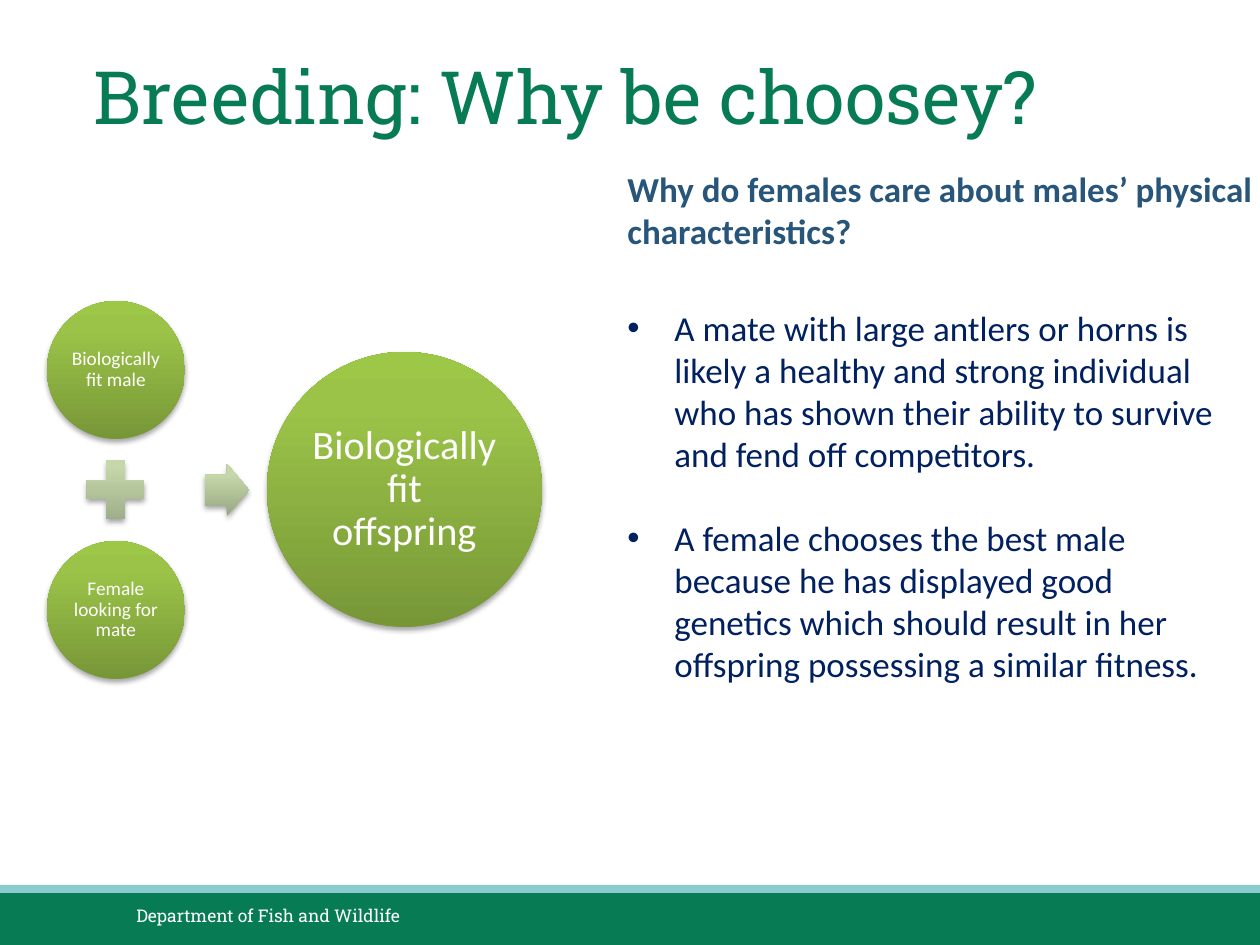
from dataclasses import dataclass

from lxml.etree import SubElement
from pptx import Presentation
from pptx.dml.color import RGBColor
from pptx.enum.shapes import MSO_SHAPE
from pptx.enum.text import MSO_ANCHOR, MSO_AUTO_SIZE, PP_ALIGN
from pptx.oxml import parse_xml
from pptx.oxml.ns import nsdecls, qn
from pptx.shapes.autoshape import Shape
from pptx.slide import Slide
from pptx.text.text import TextFrame, _Paragraph
from pptx.util import Pt

EMU_PER_PX = 914400 / 126


@dataclass(frozen=True)
class Theme:
    green: str = "067B54"
    teal: str = "8ACCCE"
    white: str = "FFFFFF"
    question: str = "28557A"
    navy: str = "002060"
    leaf: tuple[str, str, str] = ("779737", "9BC348", "9DC746")
    sage: tuple[str, str, str] = ("98A683", "C6D8AA", "C7DAAA")
    slab: str = "Roboto Slab"
    sans: str = "Calibri"
    title_size: int = 42
    body_size: int = 20
    result_size: int = 23
    parent_size: int = 11
    footer_size: int = 10


@dataclass(frozen=True)
class Box:
    left: int
    top: int
    width: int
    height: int

    def emu(self) -> tuple[int, int, int, int]:
        return px(self.left), px(self.top), px(self.width), px(self.height)


@dataclass(frozen=True)
class Circle:
    label: str
    left: int
    top: int
    diameter: int
    size: int
    inset: int


THEME = Theme()
CIRCLES = (
    Circle("Biologically fit male", 47, 301, 138, THEME.parent_size, 2),
    Circle("Female looking for mate", 47, 541, 138, THEME.parent_size, 2),
    Circle("Biologically fit offspring", 267, 352, 275, THEME.result_size, 3),
)
REASONS = (
    "A mate with large antlers or horns is likely a healthy and strong individual "
    "who has shown their ability to survive and fend off competitors.",
    "A female chooses the best male because he has displayed good genetics which "
    "should result in her offspring possessing a similar fitness.",
)


def px(length: int) -> int:
    return round(length * EMU_PER_PX)


def style(paragraph: _Paragraph, face: str, size: int, color: str, bold: bool = False) -> None:
    font = paragraph.font
    font.name, font.size, font.bold = face, Pt(size), bold
    font.color.rgb = RGBColor.from_string(color)


def add_text_frame(slide: Slide, box: Box) -> TextFrame:
    frame = slide.shapes.add_textbox(*box.emu()).text_frame
    frame.word_wrap = True
    return frame


def add_band(slide: Slide, box: Box, color: str) -> None:
    band = slide.shapes.add_shape(MSO_SHAPE.RECTANGLE, *box.emu())
    band.shadow.inherit = False
    band.fill.solid()
    band.fill.fore_color.rgb = RGBColor.from_string(color)
    band.line.fill.background()


def add_shaded(slide: Slide, kind: MSO_SHAPE, box: Box, shades: tuple[str, str, str]) -> Shape:
    """Add a borderless shape shaded from bottom to top, with a soft shadow below."""
    shape = slide.shapes.add_shape(kind, *box.emu())
    shape.line.fill.background()
    stops = "".join(
        f'<a:gs pos="{position}"><a:srgbClr val="{shade}"/></a:gs>'
        for position, shade in zip((0, 80000, 100000), shades)
    )
    properties = shape._element.spPr
    properties.find(qn("a:ln")).addprevious(parse_xml(
        f'<a:gradFill {nsdecls("a")} rotWithShape="1"><a:gsLst>{stops}</a:gsLst>'
        '<a:lin ang="16200000" scaled="0"/></a:gradFill>'
    ))
    properties.append(parse_xml(
        f'<a:effectLst {nsdecls("a")}><a:outerShdw blurRad="{Pt(3.1)}" dist="{Pt(1.8)}" '
        'dir="5400000" rotWithShape="0"><a:srgbClr val="000000"><a:alpha val="35000"/>'
        '</a:srgbClr></a:outerShdw></a:effectLst>'
    ))
    return shape


def add_circle(slide: Slide, circle: Circle) -> None:
    box = Box(circle.left, circle.top, circle.diameter, circle.diameter)
    frame = add_shaded(slide, MSO_SHAPE.OVAL, box, THEME.leaf).text_frame
    frame.word_wrap = True
    frame.vertical_anchor = MSO_ANCHOR.MIDDLE
    frame.margin_left = frame.margin_right = px(circle.inset)
    frame.margin_top = frame.margin_bottom = px(circle.inset)
    label = frame.paragraphs[0]
    label.text = circle.label
    label.alignment = PP_ALIGN.CENTER
    label.line_spacing = 0.9
    style(label, THEME.sans, circle.size, THEME.white)


def set_bullet(paragraph: _Paragraph, indent: int) -> None:
    properties = paragraph._p.get_or_add_pPr()
    properties.set("marL", str(px(indent)))
    properties.set("indent", str(-px(indent)))
    SubElement(properties, qn("a:buFont")).set("typeface", "Arial")
    SubElement(properties, qn("a:buChar")).set("char", "•")


def add_title(slide: Slide) -> None:
    title = slide.shapes.title
    title.left, title.top, title.width, title.height = Box(81, 32, 1116, 126).emu()
    frame = title.text_frame
    frame.auto_size = MSO_AUTO_SIZE.NONE
    frame.vertical_anchor = MSO_ANCHOR.MIDDLE
    heading = frame.paragraphs[0]
    heading.text = "Breeding: Why be choosey?"
    heading.alignment = PP_ALIGN.LEFT
    style(heading, THEME.slab, THEME.title_size, THEME.green)


def add_footer(slide: Slide) -> None:
    add_band(slide, Box(0, 892, 1260, 53), THEME.green)
    add_band(slide, Box(0, 885, 1260, 8), THEME.teal)
    frame = add_text_frame(slide, Box(124, 897, 400, 38))
    frame.vertical_anchor = MSO_ANCHOR.MIDDLE
    department = frame.paragraphs[0]
    department.text = "Department of Fish and Wildlife"
    style(department, THEME.slab, THEME.footer_size, THEME.white)


def add_diagram(slide: Slide) -> None:
    for circle in CIRCLES:
        add_circle(slide, circle)
    add_shaded(slide, MSO_SHAPE.MATH_PLUS, Box(76, 450, 79, 79), THEME.sage)
    arrow = add_shaded(slide, MSO_SHAPE.RIGHT_ARROW, Box(205, 464, 44, 52), THEME.sage)
    arrow.adjustments[0] = 0.6
    arrow.adjustments[1] = 0.5


def add_explanation(slide: Slide) -> None:
    question = add_text_frame(slide, Box(615, 161, 714, 120)).paragraphs[0]
    question.text = "Why do females care about males’ physical characteristics?"
    style(question, THEME.sans, THEME.body_size, THEME.question, bold=True)

    frame = add_text_frame(slide, Box(615, 300, 624, 480))
    for index, reason in enumerate(REASONS):
        paragraph = frame.add_paragraph() if index else frame.paragraphs[0]
        paragraph.text = reason
        if index:
            paragraph.space_before = Pt(24)
        set_bullet(paragraph, 47)
        style(paragraph, THEME.sans, THEME.body_size, THEME.navy)


def main() -> None:
    presentation = Presentation()
    presentation.slide_width, presentation.slide_height = px(1260), px(945)
    slide = presentation.slides.add_slide(presentation.slide_layouts[5])
    add_footer(slide)
    add_title(slide)
    add_diagram(slide)
    add_explanation(slide)
    presentation.save("out.pptx")


if __name__ == "__main__":
    main()
